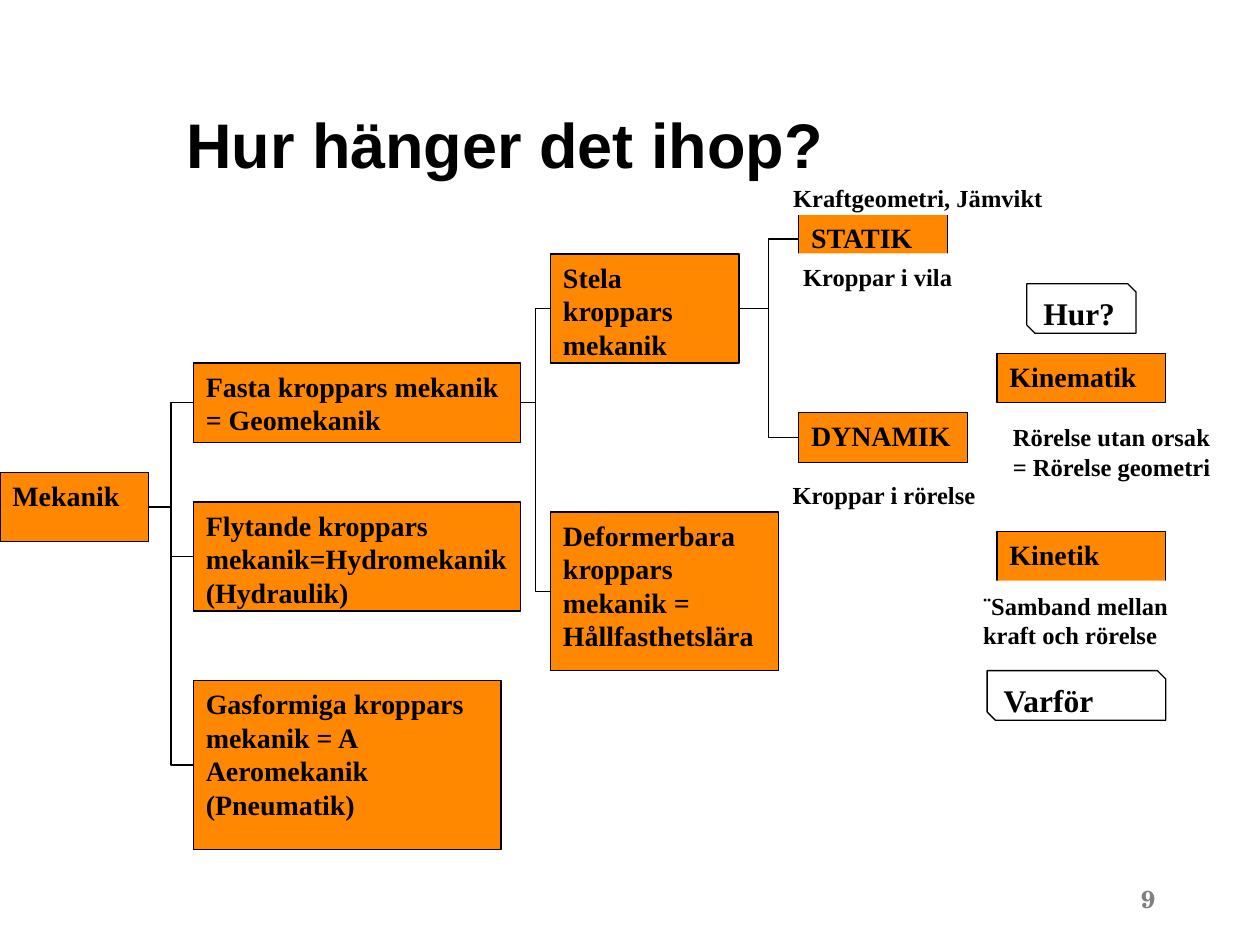
from dataclasses import dataclass

from pptx import Presentation
from pptx import util as u
from pptx.dml.color import RGBColor
from pptx.enum import shapes, text
from pptx.oxml.ns import qn

COLORS = {"ink": "000000", "topic": "FF8800", "paper": "FFFFFF", "number": "808080"}
SERIF = "Times New Roman"

TOPICS = {
    "mechanics": ("Mekanik", 0, 5.2, 3.0, 1.4),
    "solid": ("Fasta kroppars mekanik\n= Geomekanik", 3.9, 3.0, 6.6, 1.6),
    "statics": ("STATIK", 16.1, 0, 3.0, 1.0),
    "fluid": ("Flytande kroppars mekanik=Hydromekanik (Hydraulik)", 3.9, 5.8, 6.6, 2.2),
    "rigid": ("Stela kroppars mekanik", 11.1, 0.8, 3.8, 2.2),
    "deformable": ("Deformerbara kroppars mekanik = Hållfasthetslära", 11.1, 6.0, 4.6, 3.2),
    "gas": ("Gasformiga kroppars mekanik = A Aeromekanik (Pneumatik)", 3.9, 9.4, 6.2, 3.4),
    "dynamics": ("DYNAMIK", 16.1, 4.0, 3.4, 1.0),
    "kinetics": ("Kinetik", 20.1, 6.4, 3.4, 1.0),
    "kinematics": ("Kinematik", 20.1, 2.8, 3.4, 1.0),
}
BRANCHES = {
    "mechanics": ("solid", "fluid", "gas"),
    "solid": ("rigid", "deformable"),
    "rigid": ("statics", "dynamics"),
}
NOTES = (
    ("Kroppar i vila", 0.2, 1.6, 3.8, 0.8),
    ("Kraftgeometri, Jämvikt", 0, 0, 6.6, 0.8),
    ("Kroppar i rörelse", 0, 6.0, 4.6, 0.6),
    ("Rörelse utan orsak = Rörelse geometri", 4.4, 4.8, 4.7, 1.4),
    ("¨Samband mellan kraft och rörelse", 3.8, 8.2, 4.7, 1.4),
)
QUESTIONS = (
    ("Hur?", 5.0, 2.2, 2.2, 1.0),
    ("Varför", 4.2, 10.0, 3.6, 1.0),
)


@dataclass
class Box:
    """A region of the slide, in centimetres."""
    left: float
    top: float
    width: float
    height: float

    def place(self, left, top, width, height):
        """Return the lengths of an item placed relative to this box."""
        return [u.Cm(n) for n in (self.left + left, self.top + top, width, height)]

    def whole(self):
        """Return the lengths of the whole box."""
        return self.place(0, 0, self.width, self.height)


def color(name):
    """Look up a named colour."""
    return RGBColor.from_string(COLORS[name])


def write(frame, words, size, font=SERIF, ink="ink", align=text.PP_ALIGN.LEFT,
          anchor=text.MSO_ANCHOR.TOP):
    """Fill a text frame with bold text in one format."""
    frame.text = words
    frame.word_wrap = True
    frame.auto_size = text.MSO_AUTO_SIZE.NONE
    frame.vertical_anchor = anchor
    for para in frame.paragraphs:
        para.alignment = align
        for span in para.runs:
            span.font.name = font
            span.font.size = u.Pt(size)
            span.font.bold = True
            span.font.color.rgb = color(ink)


def add_label(page, kind, lengths, words, size, fill, line):
    """Add a filled and outlined shape with text."""
    shape = page.shapes.add_shape(kind, *lengths)
    shape.shadow.inherit = False
    shape.fill.solid()
    shape.fill.fore_color.rgb = color(fill)
    shape.line.color.rgb = color(line)
    shape.line.width = u.Pt(0.75)
    write(shape.text_frame, words, size)
    return shape


def add_branch(page, parent, child):
    """Join the right side of a parent to the left side of its child."""
    branch = page.shapes.add_connector(shapes.MSO_CONNECTOR.ELBOW, 0, 0, 0, 0)
    branch.begin_connect(parent, 3)
    branch.end_connect(child, 1)
    branch.line.color.rgb = color("ink")
    branch.line.width = u.Pt(0.75)
    properties = branch._element.spPr
    properties.append(properties.makeelement(qn("a:effectLst"), {}))


def add_title(page, box):
    """Place the slide title."""
    title = page.shapes.title
    title.left, title.top, title.width, title.height = box.whole()
    write(title.text_frame, "Hur hänger det ihop?", 36, "Arial",
          anchor=text.MSO_ANCHOR.MIDDLE)
    title.text_frame.paragraphs[0].line_spacing = u.Pt(40)


def add_tree(page, box):
    """Draw the topics of mechanics and the branches between them."""
    topics = {
        name: add_label(page, shapes.MSO_SHAPE.RECTANGLE, box.place(*lengths),
                        words, 16, "topic", "ink")
        for name, (words, *lengths) in TOPICS.items()
    }
    for parent, children in BRANCHES.items():
        for child in children:
            add_branch(page, topics[parent], topics[child])


def add_notes(page, box):
    """Add the explanations and the questions beside the last topics."""
    for words, *lengths in NOTES:
        add_label(page, shapes.MSO_SHAPE.ROUNDED_RECTANGLE, box.place(*lengths),
                  words, 14, "paper", "paper")
    for words, *lengths in QUESTIONS:
        add_label(page, shapes.MSO_SHAPE.SNIP_2_DIAG_RECTANGLE, box.place(*lengths),
                  words, 18, "paper", "ink")


def add_page_number(page, box):
    """Write the page number."""
    number = page.shapes.add_textbox(*box.whole())
    write(number.text_frame, "9", 14, "TeX Gyre Schola", "number",
          text.PP_ALIGN.RIGHT, text.MSO_ANCHOR.MIDDLE)


def main():
    """Build and save the deck."""
    deck = Presentation()
    deck.slide_width, deck.slide_height = u.Cm(25.4), u.Cm(19.05)
    page = deck.slides.add_slide(deck.slide_layouts[5])
    add_title(page, Box(3.5, 1.17, 18.2, 3.56))
    add_page_number(page, Box(18.26, 17.48, 5.28, 1.27))
    add_tree(page, Box(0, 4.32, 23.5, 12.8))
    add_notes(page, Box(15.7, 3.52, 9.1, 11.0))
    deck.save("out.pptx")


if __name__ == "__main__":
    main()
